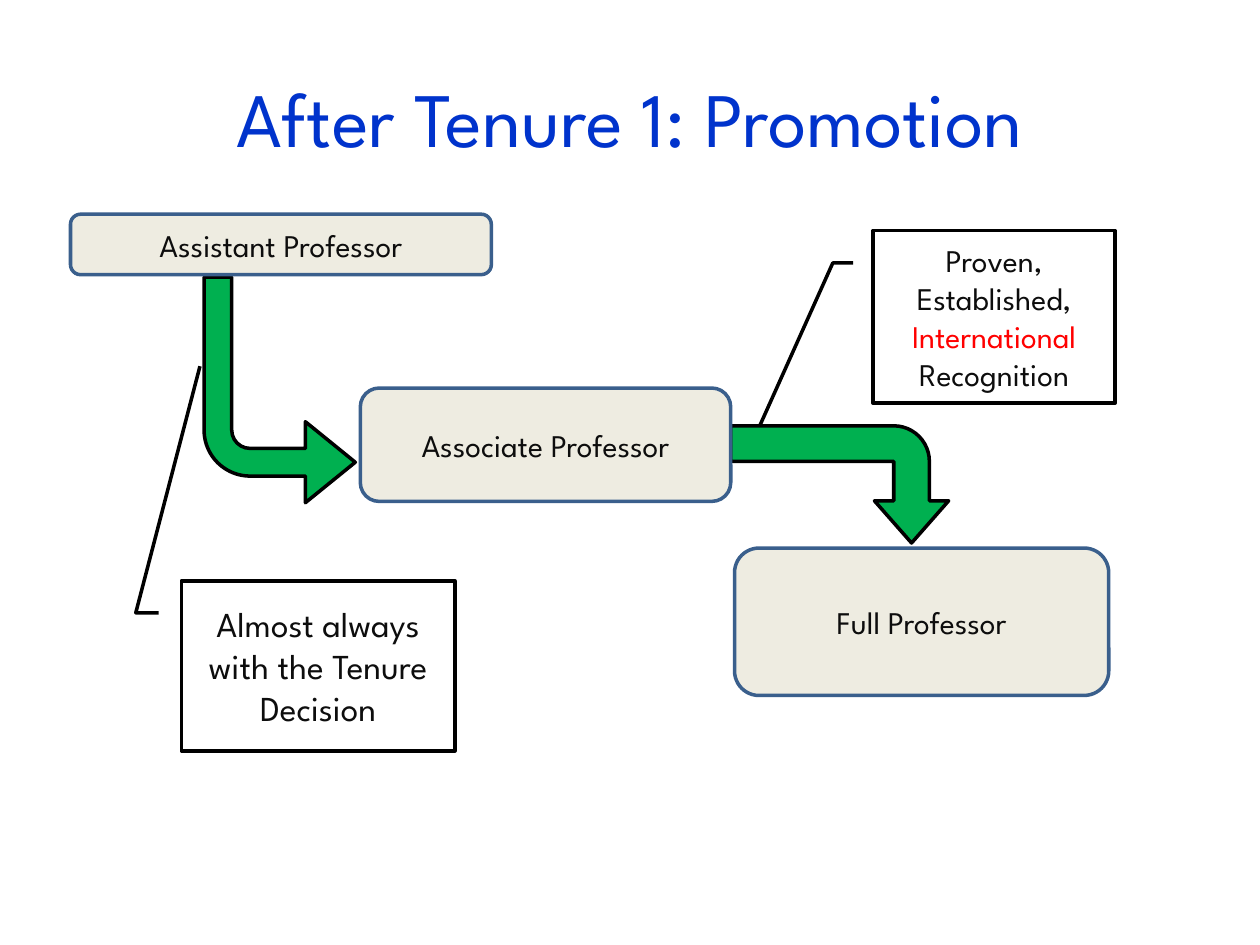
from pptx import Presentation
from pptx.dml.color import RGBColor
from pptx.enum.shapes import MSO_SHAPE
from pptx.enum.text import MSO_ANCHOR, PP_ALIGN
from pptx.util import Inches, Pt

FONT = "League Spartan"
COLORS = {"title": "0033CC", "text": "0D0D0D", "accent": "FF0000", "box": "EEECE1",
          "box_line": "3A5F8C", "arrow": "00B050", "line": "000000"}

TITLE = "After Tenure 1: Promotion"
# Places are left, top, width, height in inches
RANKS = [
    ("Assistant Professor", (0.56, 1.7, 3.34, 0.48)),
    ("Full Professor", (5.83, 4.35, 2.97, 1.17)),
    ("Associate Professor", (2.86, 3.08, 2.94, 0.9)),
]
# Place, adjustments, rotation, flips
ARROWS = [
    ((1.62, 2.2, 1.2, 1.79), (0.183, 0.268, 0.33, 0.304), 0, ["flipV"]),
    ((6.2, 2.98, 0.93, 1.73), (0.304, 0.317, 0.36, 0.304), 270, ["flipH", "flipV"]),
]
# Text runs with colour, size, place, leader line adjustments
CALLOUTS = [
    ([("Almost always with the Tenure Decision", "text")], 20,
     (1.44, 4.61, 2.17, 1.35), (0.188, -0.083, 0.188, -0.167, -1.262, 0.068)),
    ([("Proven, Established, ", "text"), ("International ", "accent"), ("Recognition", "text")], 18,
     (6.93, 1.83, 1.92, 1.37), (0.188, -0.083, 0.188, -0.167, 1.125, -0.467)),
]


def rgb(name):
    return RGBColor.from_string(COLORS[name])


def write(shape, runs, size):
    tf = shape.text_frame
    tf.word_wrap = True
    tf.vertical_anchor = MSO_ANCHOR.MIDDLE
    p = tf.paragraphs[0]
    p.alignment = PP_ALIGN.CENTER
    for text, color in runs:
        r = p.add_run()
        r.text = text
        r.font.name = FONT
        r.font.size = Pt(size)
        r.font.color.rgb = rgb(color)


def add_shape(slide, kind, place, fill, line, adjustments=()):
    sp = slide.shapes.add_shape(kind, *map(Inches, place))
    sp.shadow.inherit = False
    if fill:
        sp.fill.solid()
        sp.fill.fore_color.rgb = rgb(fill)
    else:
        sp.fill.background()
    sp.line.color.rgb = rgb(line)
    sp.line.width = Pt(2)
    for i, value in enumerate(adjustments):
        sp.adjustments[i] = value
    return sp


def main():
    prs = Presentation()
    prs.slide_width, prs.slide_height = Inches(10), Inches(7.5)
    slide = prs.slides.add_slide(prs.slide_layouts[5])

    title = slide.shapes.title
    title.left, title.top, title.width, title.height = map(Inches, (0.5, 0.3, 9, 1.25))
    write(title, [(TITLE, "title")], 44)

    for place, adjustments, rotation, flips in ARROWS:
        sp = add_shape(slide, MSO_SHAPE.BENT_ARROW, place, "arrow", "line", adjustments)
        sp.rotation = rotation
        for flip in flips:
            sp.element.spPr.get_or_add_xfrm().set(flip, "1")

    for text, place in RANKS:
        sp = add_shape(slide, MSO_SHAPE.ROUNDED_RECTANGLE, place, "box", "box_line")
        write(sp, [(text, "text")], 18)

    for runs, size, place, adjustments in CALLOUTS:
        sp = add_shape(slide, MSO_SHAPE.LINE_CALLOUT_2, place, None, "line", adjustments)
        write(sp, runs, size)

    prs.save("out.pptx")


if __name__ == "__main__":
    main()
